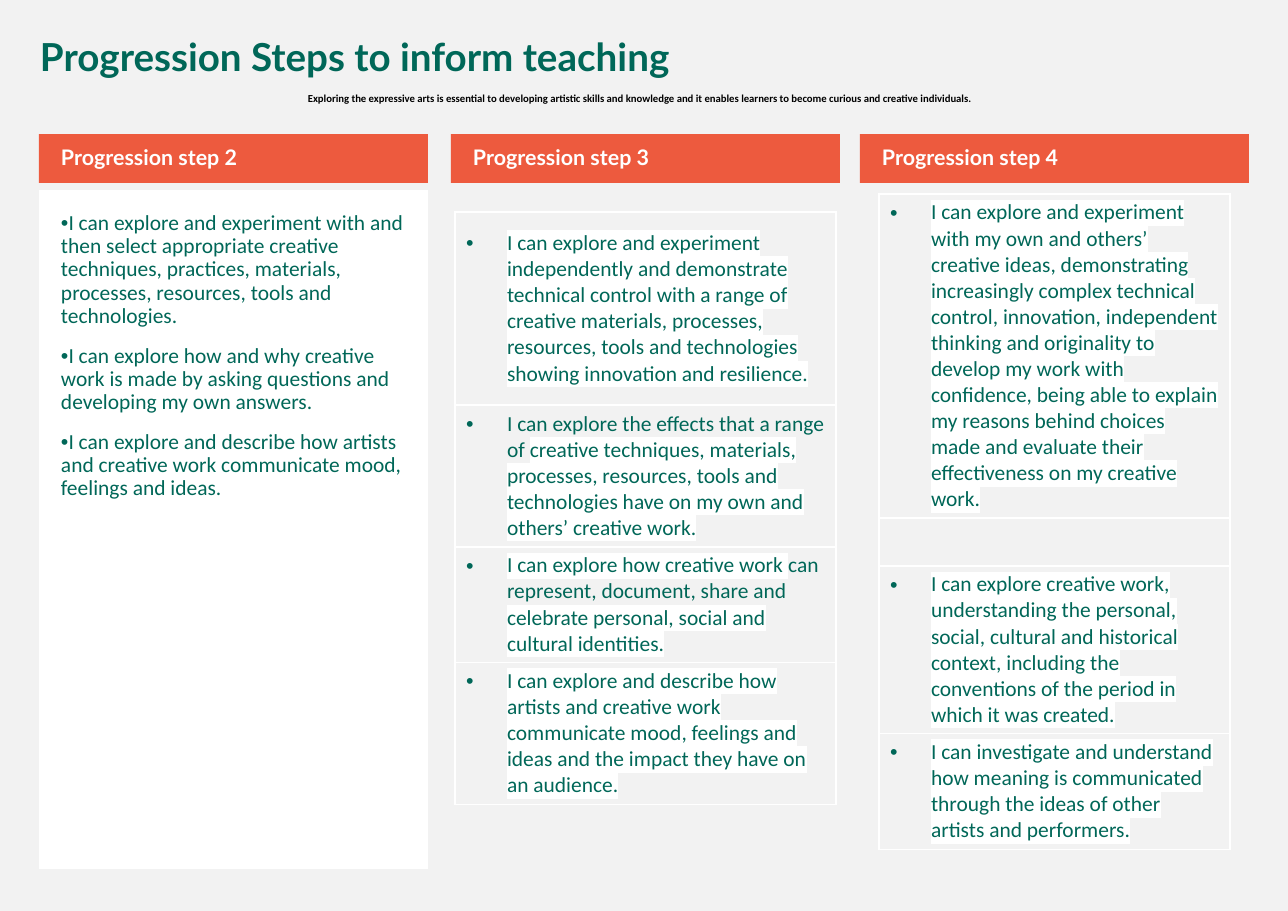
from dataclasses import dataclass

from lxml import etree
from pptx import Presentation
from pptx.dml.color import RGBColor
from pptx.enum.shapes import MSO_SHAPE
from pptx.enum.text import MSO_ANCHOR, MSO_AUTO_SIZE, PP_ALIGN
from pptx.oxml.ns import qn
from pptx.util import Pt

RECT = MSO_SHAPE.RECTANGLE
TOP, MIDDLE = MSO_ANCHOR.TOP, MSO_ANCHOR.MIDDLE
LEFT, CENTER = PP_ALIGN.LEFT, PP_ALIGN.CENTER
FIXED = MSO_AUTO_SIZE.NONE
SCALE = 8298
GREEN, ORANGE, WHITE, GREY, BLACK = "006758", "ED5A3E", "FFFFFF", "F2F2F2", "000000"


@dataclass
class Header:
    text: str
    left: int


@dataclass
class Span:
    text: str
    lit: bool = True


@dataclass
class Row:
    height: int
    spans: list[Span]


@dataclass
class Grid:
    left: int
    top: int
    width: int
    rows: list[Row]


HEADERS = [
    Header("Progression step 2", 39),
    Header("Progression step 3", 451),
    Header("Progression step 4", 860),
]

SKILLS = [
    "I can explore and experiment with and then select appropriate creative techniques, practices, materials, processes, resources, tools and technologies.",
    "I can explore how and why creative work is made by asking questions and developing my own answers.",
    "I can explore and describe how artists and creative work communicate mood, feelings and ideas.",
]

GRIDS = [
    Grid(455, 212, 381, [
        Row(193, [Span("I can explore and experiment independently and demonstrate technical control with a range of creative materials, processes, resources, tools and technologies showing innovation and resilience.")]),
        Row(142, [
            Span("I can explore the effects that a range of ", False),
            Span("creative techniques, materials, processes, resources, tools and technologies have on my own and others’ creative work."),
        ]),
        Row(115, [
            Span("I can explore how creative work "),
            Span("can represent, document, share and ", False),
            Span("celebrate personal, social and cultural identities."),
        ]),
        Row(142, [Span("I can explore and describe how artists and creative work communicate mood, feelings and ideas and the impact they have on an audience.")]),
    ]),
    Grid(879, 194, 351, [
        Row(324, [Span("I can explore and experiment with my own and others’ creative ideas, demonstrating increasingly complex technical control, innovation, independent thinking and originality to develop my work with confidence, being able to explain my reasons behind choices made and evaluate their effectiveness on my creative work.")]),
        Row(48, []),
        Row(167, [Span("I can explore creative work, understanding the personal, social, cultural and historical context, including the conventions of the period in which it was created.")]),
        Row(116, [Span("I can investigate and understand how meaning is communicated through the ideas of other artists and performers.")]),
    ]),
]


def px(n: int) -> int:
    return n * SCALE


def paint(fill, color: str) -> None:
    fill.solid()
    fill.fore_color.rgb = RGBColor.from_string(color)


def place(shape, left: int, top: int, width: int, height: int) -> None:
    shape.left, shape.top = px(left), px(top)
    shape.width, shape.height = px(width), px(height)


def set_frame(frame, anchor, left: int, top: int, right: int, bottom: int) -> None:
    frame.word_wrap = True
    frame.auto_size = FIXED
    frame.vertical_anchor = anchor
    frame.margin_left, frame.margin_top = px(left), px(top)
    frame.margin_right, frame.margin_bottom = px(right), px(bottom)


def next_par(frame, index: int, spacing: float, align=LEFT):
    par = frame.paragraphs[0] if index == 0 else frame.add_paragraph()
    par.alignment = align
    par.line_spacing = spacing
    par.space_before = Pt(11)
    return par


def add_run(par, text: str, size: float, face: str, color: str, bold: bool = False):
    run = par.add_run()
    run.text = text
    run.font.size, run.font.bold = Pt(size), bold
    paint(run.font.fill, color)
    run.font.name = face
    return run


def light(run) -> None:
    mark = etree.Element(qn("a:highlight"))
    etree.SubElement(mark, qn("a:srgbClr"), val=WHITE)
    run.font._element.find(qn("a:solidFill")).addnext(mark)


def indent(par, left: int, char: str = "") -> None:
    props = par._p.get_or_add_pPr()
    props.set("marL", str(px(left)))
    props.set("indent", str(-px(left)))
    if char:
        etree.SubElement(props, qn("a:buFont"), typeface="Arial")
        etree.SubElement(props, qn("a:buChar"), char=char)
    else:
        etree.SubElement(props, qn("a:buNone"))


def set_edges(cell) -> None:
    props = cell._tc.get_or_add_tcPr()
    for i, side in enumerate(("lnL", "lnR", "lnT", "lnB")):
        line = etree.Element(qn(f"a:{side}"), w=str(Pt(1)))
        fill = etree.SubElement(line, qn("a:solidFill"))
        etree.SubElement(fill, qn("a:srgbClr"), val=WHITE)
        props.insert(i, line)


def draw_title(shape) -> None:
    place(shape, 29, 40, 1221, 72)
    frame = shape.text_frame
    set_frame(frame, TOP, 11, 6, 11, 6)
    par = next_par(frame, 0, 0.7)
    add_run(par, "Progression Steps to inform teaching", 25.2, "Lato", GREEN, True)
    par = next_par(frame, 1, 0.7, CENTER)
    add_run(par, "Exploring the expressive arts is essential to developing artistic skills and knowledge and it enables learners to become curious and creative individuals.", 7, "Calibri", BLACK, True)


def draw_list(shape) -> None:
    place(shape, 39, 190, 389, 679)
    paint(shape.fill, WHITE)
    set_frame(shape.text_frame, TOP, 22, 22, 22, 22)
    for i, skill in enumerate(SKILLS):
        par = next_par(shape.text_frame, i, 0.9)
        indent(par, 0)
        add_run(par, "•", 14, "Arial", GREEN)
        add_run(par, skill, 14, "Calibri", GREEN)


def draw_header(slide, header: Header) -> None:
    shape = slide.shapes.add_shape(RECT, 0, 0, 0, 0)
    place(shape, header.left, 134, 389, 49)
    shape.shadow.inherit = False
    paint(shape.fill, ORANGE)
    shape.line.fill.background()
    set_frame(shape.text_frame, MIDDLE, 22, 6, 11, 6)
    par = next_par(shape.text_frame, 0, 0.9)
    add_run(par, header.text, 14, "Lato", WHITE, True)


def draw_grid(slide, grid: Grid) -> None:
    total = sum(row.height for row in grid.rows)
    table = slide.shapes.add_table(
        len(grid.rows), 1, px(grid.left), px(grid.top), px(grid.width), px(total)
    ).table
    table.first_row = table.horz_banding = False
    for i, row in enumerate(grid.rows):
        table.rows[i].height = px(row.height)
        cell = table.cell(i, 0)
        cell.fill.background()
        cell.vertical_anchor = MIDDLE
        set_edges(cell)
        par = cell.text_frame.paragraphs[0]
        if row.spans:
            indent(par, 41, "•")
        for span in row.spans:
            run = add_run(par, span.text, 14, "Calibri", GREEN)
            if span.lit:
                light(run)


def main() -> None:
    deck = Presentation()
    deck.slide_width, deck.slide_height = px(1288), px(911)
    slide = deck.slides.add_slide(deck.slide_layouts[1])
    paint(slide.background.fill, GREY)
    draw_title(slide.shapes.title)
    draw_list(slide.placeholders[1])
    for header in HEADERS:
        draw_header(slide, header)
    for grid in GRIDS:
        draw_grid(slide, grid)
    deck.save("out.pptx")


if __name__ == "__main__":
    main()
